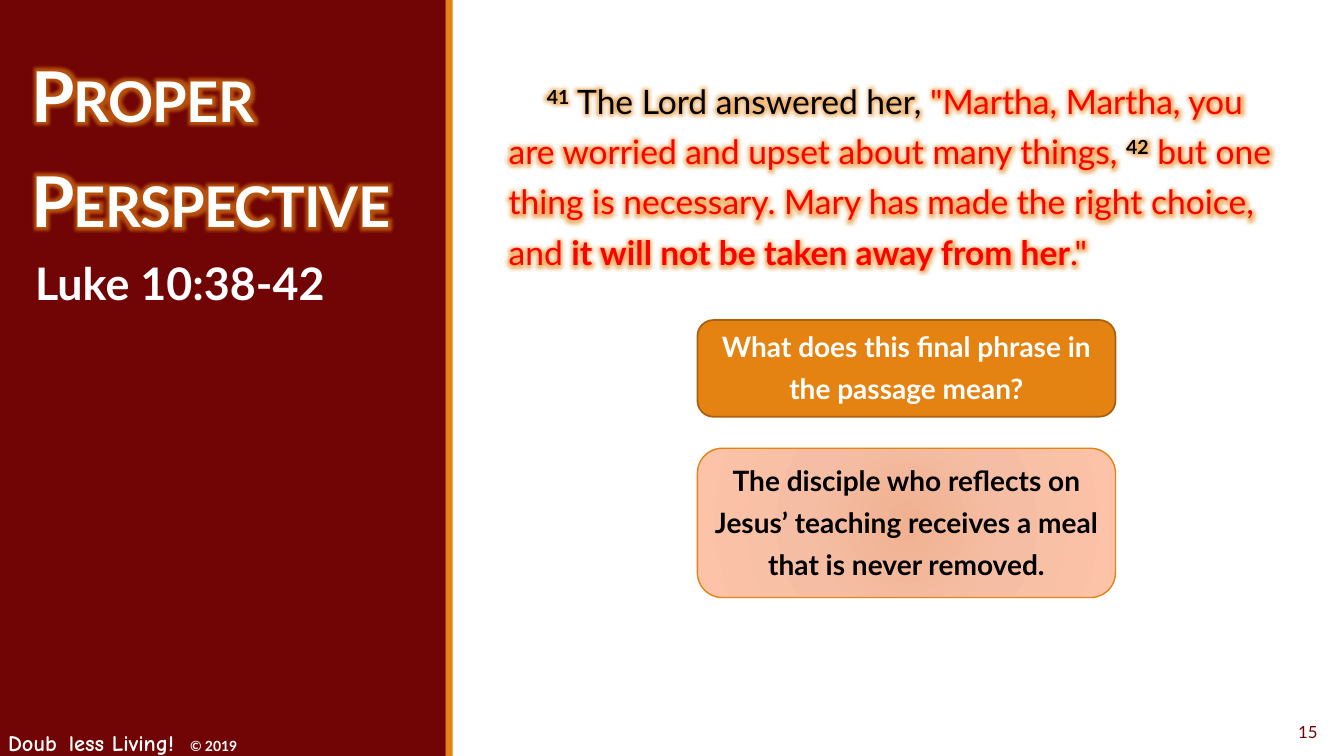
from dataclasses import dataclass

from lxml.etree import SubElement
from pptx import Presentation
from pptx.dml.color import RGBColor
from pptx.enum.shapes import MSO_SHAPE
from pptx.enum.text import MSO_ANCHOR, MSO_AUTO_SIZE, PP_ALIGN
from pptx.oxml import parse_xml
from pptx.oxml.ns import nsdecls, qn
from pptx.util import Pt


@dataclass(frozen=True)
class Theme:
    font: str = "Lato"
    brand_font: str = "Comic Neue"
    maroon: str = "710505"
    orange: str = "E48312"
    orange_edge: str = "A9610D"
    white: str = "FFFFFF"
    black: str = "000000"
    red: str = "FF0000"
    answer_stops: tuple = ((0, "F0B191"), (45, "F5BEA4"), (100, "FDC3A8"))
    title_size: int = 50
    reference_size: int = 32
    verse_size: int = 24
    card_size: int = 20
    brand_size: int = 16
    number_size: int = 12
    copyright_size: int = 10
    line_spacing: float = 1.25


THEME = Theme()


def color(code):
    return RGBColor.from_string(code)


def style(font, size, code, bold=False, name=THEME.font):
    font.name, font.size, font.bold = name, Pt(size), bold
    font.color.rgb = color(code)


def set_frame(frame, insets, anchor=MSO_ANCHOR.TOP):
    frame.word_wrap = True
    frame.auto_size = MSO_AUTO_SIZE.NONE
    frame.vertical_anchor = anchor
    (frame.margin_left, frame.margin_top,
     frame.margin_right, frame.margin_bottom) = map(Pt, insets)
    return frame.paragraphs[0]


def text_box(slide, box, insets=(7.2, 3.6, 7.2, 3.6), anchor=MSO_ANCHOR.TOP):
    frame = slide.shapes.add_textbox(*map(Pt, box)).text_frame
    return set_frame(frame, insets, anchor)


def add_run(paragraph, text):
    run = paragraph.add_run()
    run.text = text
    return run


def add_glow(run, radius, alpha):
    effects = SubElement(run.font._element, qn("a:effectLst"))
    glow = SubElement(effects, qn("a:glow"), rad=str(Pt(radius)))
    tint = SubElement(glow, qn("a:srgbClr"), val=THEME.orange)
    SubElement(tint, qn("a:alpha"), val=str(alpha * 1000))


def block(slide, kind, box, fill):
    shape = slide.shapes.add_shape(kind, *map(Pt, box))
    shape.shadow.inherit = False
    shape.fill.solid()
    shape.fill.fore_color.rgb = color(fill)
    shape.line.fill.background()
    return shape


def add_sidebar(slide, box):
    left, top, width, height = box
    block(slide, MSO_SHAPE.RECTANGLE, box, THEME.maroon)
    block(slide, MSO_SHAPE.RECTANGLE, (left + width - 0.7, top, 5, height), THEME.orange)

    # Title, raised in front of the panel
    title = slide.shapes.title
    slide.shapes._spTree.append(title._element)
    title.left, title.top, title.width, title.height = map(
        Pt, (left + 15.1, top + 18.7, 288, 214.6))
    heading = set_frame(title.text_frame, (7.2, 3.6, 7.2, 3.6))
    heading.alignment = PP_ALIGN.LEFT
    heading.line_spacing = THEME.line_spacing
    style(heading.font, THEME.title_size, THEME.white, True)
    words = add_run(heading, "Proper Perspective")
    words.font._element.set("cap", "small")
    words.font._element.set("spc", "-50")
    add_glow(words, 10, 60)

    # Passage reference
    reference = text_box(slide, (left + 18, top + 179.3, 267, 46))
    style(reference.font, THEME.reference_size, THEME.white, True)
    add_run(reference, "Luke 10:38-42")

    # Series name and copyright
    footer = text_box(slide, (left, top + height - 31, 280, 31), (5.8, 3.6, 7.2, 0))
    tabs = SubElement(footer._p.get_or_add_pPr(), qn("a:tabLst"))
    SubElement(tabs, qn("a:tab"), pos=str(Pt(130)), algn="l")
    style(footer.font, THEME.brand_size, THEME.white, True, THEME.brand_font)
    add_run(footer, "Doub")
    add_run(footer, " ").font.size = Pt(24)
    add_run(footer, "less Living!\t")
    style(add_run(footer, "© 2019").font, THEME.copyright_size, THEME.white, True)


def add_verse(slide, box):
    verse = text_box(slide, box, (0, 3.6, 0, 3.6))
    verse._p.get_or_add_pPr().set("indent", str(Pt(27.4)))
    verse.line_spacing = THEME.line_spacing
    verse.space_after = Pt(2)
    style(verse.font, THEME.verse_size, THEME.black)
    # text, colour, bold, verse number
    for text, code, bold, number in (
        ("41", THEME.black, True, True),
        (" The Lord answered her, ", THEME.black, False, False),
        ('"Martha, Martha, you are worried and upset about many things, ',
         THEME.red, False, False),
        ("42", THEME.black, True, True),
        (" but one thing is necessary. Mary has made the right choice, and ",
         THEME.red, False, False),
        ("it will not be taken away from her", THEME.red, True, False),
        ('."', THEME.red, False, False),
    ):
        run = add_run(verse, text)
        run.font.bold = bold
        run.font.color.rgb = color(code)
        if number:
            run.font._element.set("baseline", "30000")
        add_glow(run, 10, 60)


def add_card(slide, box, text, text_color, fill, edge, edge_width):
    card = block(slide, MSO_SHAPE.ROUNDED_RECTANGLE, box, fill)
    card.line.color.rgb = color(edge)
    card.line.width = Pt(edge_width)
    words = set_frame(card.text_frame, (7, 0, 7, 7.2), MSO_ANCHOR.MIDDLE)
    words.alignment = PP_ALIGN.CENTER
    words.line_spacing = THEME.line_spacing
    style(words.font, THEME.card_size, text_color, True)
    add_run(words, text)
    return card


def fill_radial(shape, stops):
    stop_xml = "".join(
        f'<a:gs pos="{position * 1000}"><a:srgbClr val="{code}"/></a:gs>'
        for position, code in stops)
    gradient = parse_xml(
        f'<a:gradFill {nsdecls("a")} rotWithShape="1"><a:gsLst>{stop_xml}</a:gsLst>'
        '<a:path path="circle"><a:fillToRect l="50000" t="50000" r="50000" b="50000"/>'
        '</a:path></a:gradFill>')
    properties = shape._element.spPr
    properties.replace(properties.find(qn("a:solidFill")), gradient)


def add_discussion(slide, box):
    left, top, width, height = box
    question_height, gap = 69.1, 22.5
    add_card(slide, (left, top, width, question_height),
             "What does this final phrase in the passage mean?",
             THEME.white, THEME.orange, THEME.orange_edge, 1.25)
    answer_top = question_height + gap
    answer = add_card(
        slide, (left, top + answer_top, width, height - answer_top),
        "The disciple who reflects on Jesus’ teaching receives a meal that is never removed.",
        THEME.black, THEME.white, THEME.orange, 1)
    fill_radial(answer, THEME.answer_stops)


def add_page_number(slide, box):
    number = text_box(slide, box, anchor=MSO_ANCHOR.MIDDLE)
    number.alignment = PP_ALIGN.RIGHT
    style(number.font, THEME.number_size, THEME.maroon)
    add_run(number, "15")


def main():
    deck = Presentation()
    deck.slide_width, deck.slide_height = Pt(960), Pt(540)
    slide = deck.slides.add_slide(deck.slide_layouts[5])
    add_sidebar(slide, (0, 0, 319, 540))
    add_verse(slide, (363.3, 46.8, 548.6, 160))
    add_discussion(slide, (498.2, 228.6, 298.6, 198.2))
    add_page_number(slide, (851, 508.3, 97.2, 28.8))
    deck.save("out.pptx")


if __name__ == "__main__":
    main()
